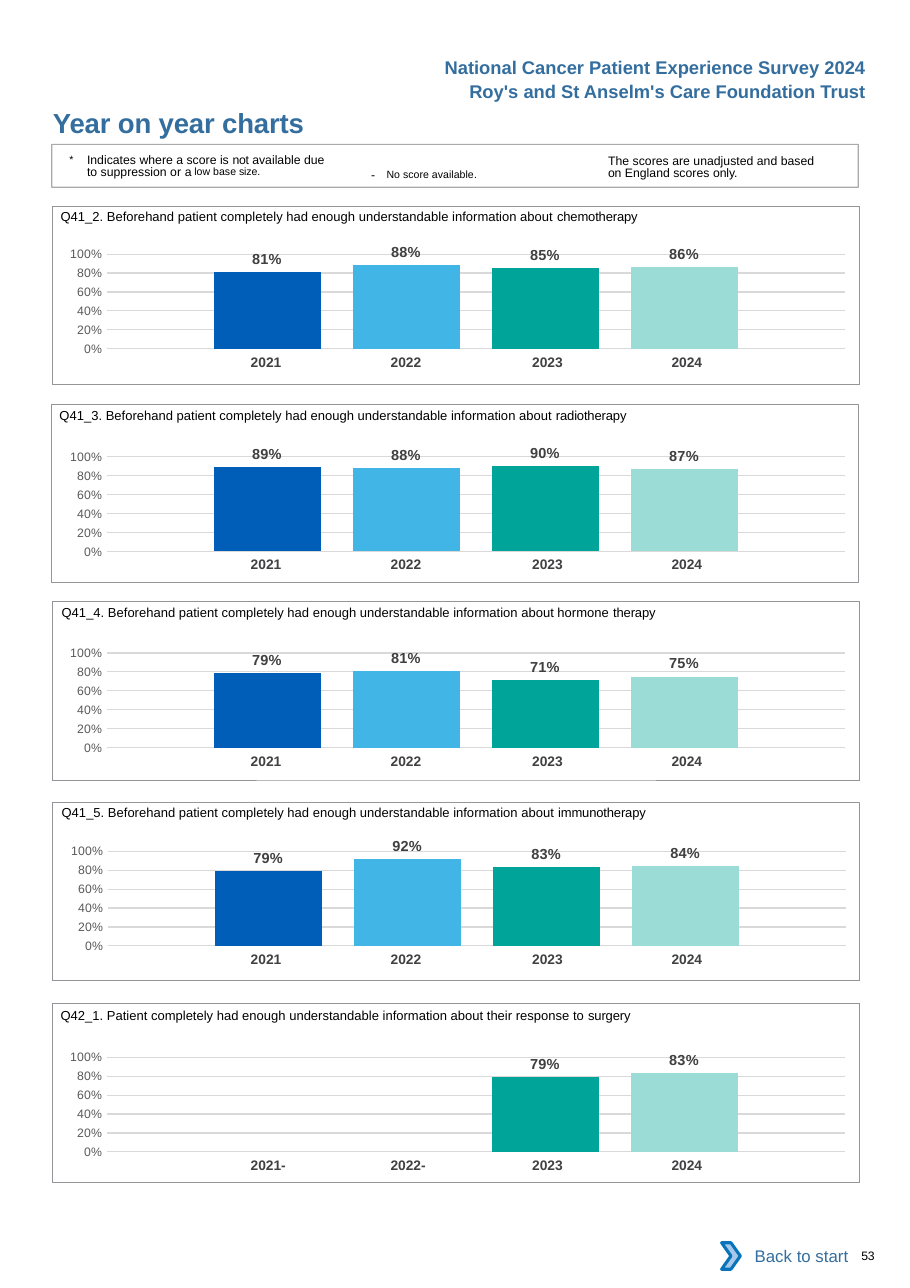
from dataclasses import dataclass
from typing import Optional

from lxml import etree
from pptx import Presentation
from pptx.chart.data import CategoryChartData
from pptx.dml.color import RGBColor
from pptx.enum.chart import XL_CHART_TYPE, XL_LABEL_POSITION, XL_TICK_MARK
from pptx.enum.shapes import MSO_SHAPE
from pptx.enum.text import MSO_ANCHOR, PP_ALIGN
from pptx.oxml.ns import qn
from pptx.util import Inches, Pt

COLUMNS = XL_CHART_TYPE.COLUMN_CLUSTERED
OUTSIDE_END = XL_LABEL_POSITION.OUTSIDE_END
NO_TICK = XL_TICK_MARK.NONE
RECTANGLE, CHEVRON = MSO_SHAPE.RECTANGLE, MSO_SHAPE.CHEVRON
TOP, MIDDLE = MSO_ANCHOR.TOP, MSO_ANCHOR.MIDDLE
LEFT, CENTER, RIGHT = PP_ALIGN.LEFT, PP_ALIGN.CENTER, PP_ALIGN.RIGHT


@dataclass(frozen=True)
class Theme:
    font: str = "Arial"
    chart_font: str = "Calibri"
    heading: str = "336E9F"
    text: str = "000000"
    year: str = "414042"
    axis: str = "595959"
    label: str = "404040"
    grid: str = "D9D9D9"
    border: str = "939598"
    paper: str = "FFFFFF"
    arrow_fill: str = "A8C7E9"
    arrow_line: str = "0A74BB"
    bars: tuple = ("005EB8", "41B6E6", "00A499", "9CDCD7")
    title_size: float = 18
    header_size: float = 12
    link_size: float = 11
    label_size: float = 9.5
    year_size: float = 9
    question_size: float = 8.5
    small_size: float = 8


THEME = Theme()
PANEL_WIDTH, PANEL_HEIGHT = 7.32, 1.62
YEARS = ("2021", "2022", "2023", "2024")
YEAR_WIDTHS = (1.27, 1.27, 1.34, 1.27)
YEAR_INSETS = ((0.1, 0), (0.1, 0), (0.1, 0.04), (0.1, 0.12))


@dataclass(frozen=True)
class Span:
    text: str
    size: float = THEME.small_size
    color: str = THEME.text
    bold: bool = False
    spacing: float = 0
    raised: int = 0


@dataclass(frozen=True)
class Panel:
    question: str
    last_word: str
    question_at: tuple[float, float]
    left: float
    top: float
    chart_at: tuple[float, float]
    scores: tuple[Optional[float], ...]


BEFOREHAND = "Beforehand patient completely had enough understandable information about "
PANELS = (
    Panel("Q41_2. " + BEFOREHAND, "chemotherapy", (0.55, 1.8), 0.48, 1.87,
          (0.39, 2.12), (0.81, 0.88, 0.85, 0.86)),
    Panel("Q41_3. " + BEFOREHAND, "radiotherapy", (0.54, 3.61), 0.47, 3.67,
          (0.39, 3.96), (0.89, 0.88, 0.9, 0.87)),
    Panel("Q41_4. " + BEFOREHAND + "hormone ", "therapy", (0.56, 5.4), 0.48, 5.46,
          (0.39, 5.74), (0.79, 0.81, 0.71, 0.75)),
    Panel("Q41_5. " + BEFOREHAND, "immunotherapy", (0.56, 7.21), 0.48, 7.28,
          (0.4, 7.54), (0.79, 0.92, 0.83, 0.84)),
    Panel("Q42_1. Patient completely had enough understandable information about their "
          "response to ", "surgery", (0.55, 9.05), 0.48, 9.11,
          (0.39, 9.41), (None, None, 0.79, 0.83)),
)


def style_font(font, size: float, color: str, bold: bool = False) -> None:
    font.name, font.size, font.bold = THEME.font, Pt(size), bold
    font.color.rgb = RGBColor.from_string(color)


def write(frame, spans, insets=(0, 0, 0, 0), align=LEFT, anchor=TOP, wrap=True):
    frame.word_wrap, frame.vertical_anchor = wrap, anchor
    (frame.margin_left, frame.margin_top,
     frame.margin_right, frame.margin_bottom) = map(Inches, insets)
    paragraph = frame.paragraphs[0]
    paragraph.alignment = align
    for span in spans:
        run = paragraph.add_run()
        run.text = span.text
        style_font(run.font, span.size, span.color, span.bold)
        properties = run._r.get_or_add_rPr()
        if span.spacing:
            properties.set("spc", str(round(span.spacing * 100)))
        if span.raised:
            properties.set("baseline", str(span.raised * 1000))
    return paragraph


def add_text(slide, box, spans, **layout):
    text_box = slide.shapes.add_textbox(*map(Inches, box))
    return write(text_box.text_frame, spans, **layout)


def add_box(slide, kind, box, fill=None, line=None, weight: float = 0.5):
    shape = slide.shapes.add_shape(kind, *map(Inches, box))
    shape.shadow.inherit = False
    if fill:
        shape.fill.solid()
        shape.fill.fore_color.rgb = RGBColor.from_string(fill)
    else:
        shape.fill.background()
    if line:
        shape.line.color.rgb = RGBColor.from_string(line)
        shape.line.width = Pt(weight)
    else:
        shape.line.fill.background()
    return shape


def add_years(slide, panel: Panel) -> None:
    box = (1.73, panel.chart_at[1] + 1.05, sum(YEAR_WIDTHS), 0.27)
    table = slide.shapes.add_table(1, len(YEARS), *map(Inches, box)).table
    table.first_row = table.horz_banding = False
    for index, (year, width) in enumerate(zip(YEARS, YEAR_WIDTHS)):
        table.columns[index].width = Inches(width)
        cell = table.cell(0, index)
        cell.fill.background()
        left, right = YEAR_INSETS[index]
        missing = panel.scores[index] is None
        write(cell.text_frame,
              [Span(year + "-" * missing, THEME.year_size, THEME.year, True)], align=CENTER)
        cell.margin_left = Inches(left + 0.04 * missing)
        cell.margin_right = Inches(right)
        cell.margin_top = cell.margin_bottom = Inches(0.05)


def add_scores(slide, panel: Panel) -> None:
    data = CategoryChartData(number_format="0%")
    data.categories = ["1"]
    for number, score in enumerate(panel.scores, 1):
        data.add_series(f"Series {number}", [score])
    box = (*panel.chart_at, 7.32, 1.29)
    chart = slide.shapes.add_chart(COLUMNS, *map(Inches, box), data).chart
    chart.has_legend = chart.has_title = False
    chart.font.name, chart.font.size = THEME.chart_font, Pt(10)
    chart.font.color.rgb = RGBColor.from_string(THEME.text)
    chart.category_axis.visible = False

    axis = chart.value_axis
    axis.minimum_scale, axis.maximum_scale, axis.major_unit = 0, 1, 0.2
    axis.major_tick_mark = axis.minor_tick_mark = NO_TICK
    axis.format.line.fill.background()
    axis.major_gridlines.format.line.color.rgb = RGBColor.from_string(THEME.grid)
    axis.major_gridlines.format.line.width = Pt(0.75)
    axis.tick_labels.number_format = "0%"
    axis.tick_labels.number_format_is_linked = False
    style_font(axis.tick_labels.font, THEME.small_size, THEME.axis)

    plot = chart.plots[0]
    plot.gap_width, plot.overlap, plot.vary_by_categories = 200, -30, False
    for series, color in zip(plot.series, THEME.bars):
        series.format.fill.solid()
        series.format.fill.fore_color.rgb = RGBColor.from_string(color)
        labels = series.data_labels
        labels.show_value, labels.position = True, OUTSIDE_END
        labels.number_format, labels.number_format_is_linked = "0%", False
        style_font(labels.font, THEME.label_size, THEME.label, True)

    # Fixed inner plot area
    area = chart._chartSpace.chart.plotArea
    for old in area.findall(qn("c:layout")):
        area.remove(old)
    layout = etree.Element(qn("c:layout"))
    area.insert(0, layout)
    manual = etree.SubElement(layout, qn("c:manualLayout"))
    settings = {"layoutTarget": "inner", "xMode": "edge", "yMode": "edge",
                "x": "0.079", "y": "0.145", "w": "0.915", "h": "0.666"}
    for name, value in settings.items():
        etree.SubElement(manual, qn("c:" + name)).set("val", value)


def add_notes_box(slide) -> None:
    paragraph = add_text(slide, (5.52, 1.38, 2.01, 0.27), [
        Span("The scores are unadjusted and based"), Span(" on", spacing=-0.2),
        Span(" England scores "), Span("only.", spacing=-0.1)], insets=(0, 0.03, 0, 0))
    paragraph.line_spacing, paragraph.space_before = Pt(8.1), Pt(2.5)
    paragraph = add_text(slide, (3.27, 1.41, 1.83, 0.24), [
        Span("- ", spacing=2.6), Span("No score available", 12, raised=3),
        Span(".", 12, spacing=-0.1, raised=3)], insets=(0.1, 0.05, 0.1, 0.05))
    paragraph.space_before = Pt(2.1)
    paragraph = add_text(slide, (0.63, 1.38, 2.35, 0.27), [
        Span("*\t", 12, raised=3), Span("Indicates where a score is "),
        Span("not ", spacing=-0.2), Span("available due to suppression or "),
        Span("a ", spacing=-0.5), Span("low base", 12, raised=7),
        Span(" size.", 12, spacing=-0.1, raised=7)], insets=(0, 0.03, 0, 0))
    paragraph.line_spacing, paragraph.space_before = Pt(8.1), Pt(2.5)
    indent = paragraph._p.get_or_add_pPr()
    indent.set("marL", str(Inches(0.16)))
    indent.set("indent", str(Inches(-0.16)))
    frame = add_box(slide, RECTANGLE, (0.47, 1.31, PANEL_WIDTH, 0.39), None, THEME.border, 0.75)
    color = frame.line._ln.find(".//" + qn("a:srgbClr"))
    etree.SubElement(color, qn("a:alpha")).set("val", "80000")


def main() -> None:
    presentation = Presentation()
    presentation.slide_width, presentation.slide_height = Inches(8.26), Inches(11.69)
    slide = presentation.slides.add_slide(presentation.slide_layouts[5])

    # Title and header
    title = slide.shapes.title
    title.left, title.top, title.width, title.height = map(Inches, (0.47, 0.96, 4.5, 0.3))
    paragraph = write(title.text_frame, [
        Span("Year on year charts", THEME.title_size, THEME.heading, True, -0.1)],
        insets=(0.01, 0, 0, 0))
    paragraph.space_before = Pt(2)
    headers = (((3.92, 0.46, 4.04, 0.3), "National Cancer Patient Experience Survey 2024"),
               ((4.16, 0.68, 3.8, 0.3), "Roy's and St Anselm's Care Foundation Trust"))
    for box, text in headers:
        add_text(slide, box, [Span(text, THEME.header_size, THEME.heading, True)],
                 insets=(0.1, 0.05, 0.1, 0.05), align=RIGHT, wrap=False)
    add_notes_box(slide)

    # Question panels
    for panel in PANELS:
        add_years(slide, panel)
        add_scores(slide, panel)
        add_box(slide, RECTANGLE, (panel.left, panel.top, PANEL_WIDTH, PANEL_HEIGHT),
                None, THEME.border)
        add_text(slide, (*panel.question_at, 7.2, 0.24), [
            Span(panel.question, THEME.question_size),
            Span(panel.last_word, THEME.question_size, spacing=-0.1)], insets=(0, 0.09, 0, 0))

    # Footer
    link = add_box(slide, RECTANGLE, (6.62, 11.19, 1.18, 0.42), THEME.paper)
    write(link.text_frame, [Span("Back to start", THEME.link_size, THEME.heading)],
          insets=(0.1, 0.05, 0.1, 0.05), align=RIGHT, anchor=MIDDLE)
    add_box(slide, CHEVRON, (6.55, 11.28, 0.17, 0.24), THEME.arrow_fill, THEME.arrow_line, 2)
    add_text(slide, (7.72, 11.33, 0.51, 0.13), [Span("53", spacing=-0.2)],
             insets=(0.1, 0, 0, 0))
    presentation.save("out.pptx")


if __name__ == "__main__":
    main()
